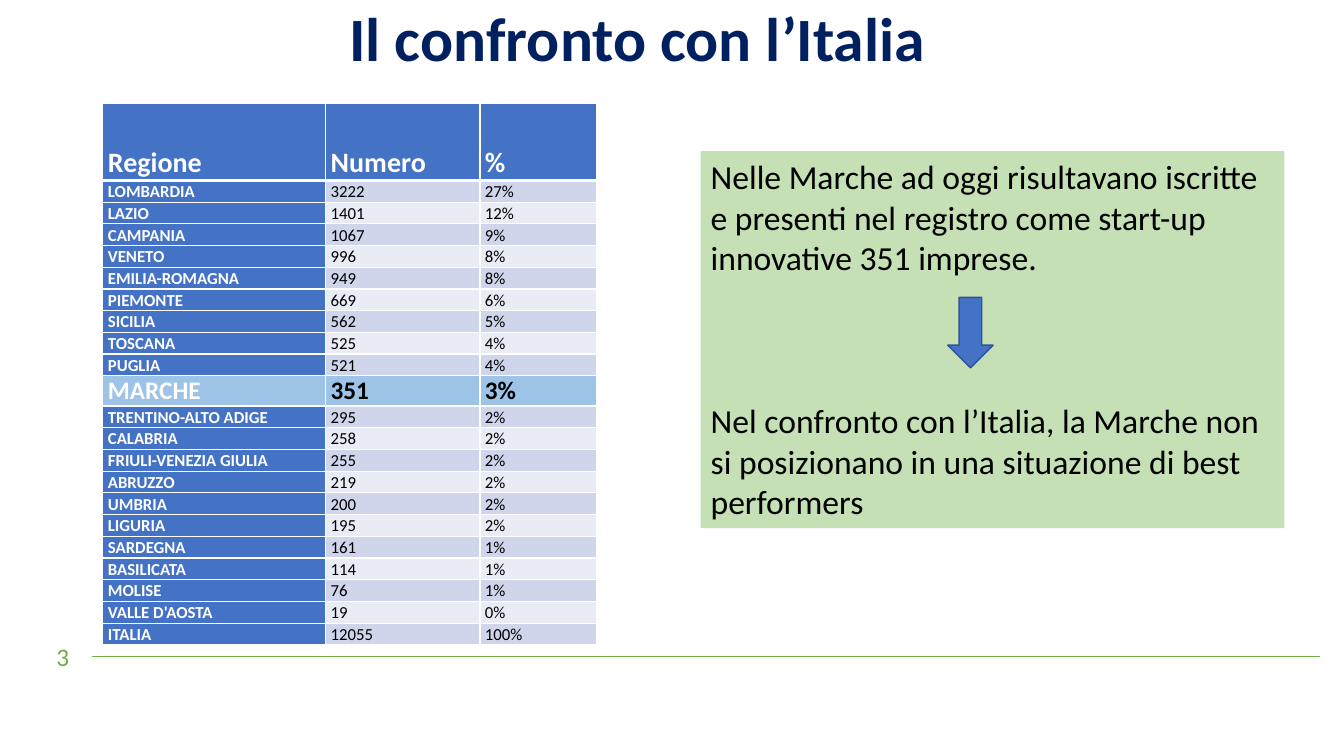
import pptx
import pptx.util
import pptx.dml.color
import pptx.enum.shapes
import pptx.enum.text
import pptx.oxml
import pptx.oxml.ns
from pptx.util import Inches

ALIGN = pptx.enum.text.PP_ALIGN
ANCHOR = pptx.enum.text.MSO_ANCHOR
SHAPE = pptx.enum.shapes.MSO_SHAPE
WHITE, BLACK, BLUE, GREEN = "FFFFFF", "000000", "4472C4", "70AD47"


def rgb(color):
    return pptx.dml.color.RGBColor.from_string(color)


def style_text(paragraph, size, color, bold=False, align=ALIGN.LEFT):
    paragraph.alignment = align
    for run in paragraph.runs:
        run.font.name = "Calibri"
        run.font.size = pptx.util.Pt(size)
        run.font.bold = bold
        run.font.color.rgb = rgb(color)


deck = pptx.Presentation()
deck.slide_width, deck.slide_height = Inches(13.33), Inches(7.5)
slide = deck.slides.add_slide(deck.slide_layouts.get_by_name("Title Only"))
shapes = slide.shapes

# Title
title = shapes.title
title.left, title.top = Inches(-0.44), Inches(-0.3)
title.width, title.height = Inches(13.53), Inches(1.8)
title.text_frame.text = "Il confronto con l’Italia"
title.text_frame.auto_size = pptx.enum.text.MSO_AUTO_SIZE.NONE
title.text_frame.vertical_anchor = ANCHOR.BOTTOM
title.text_frame.margin_bottom = Inches(0.76)
title.text_frame.paragraphs[0].line_spacing = 0.9
style_text(title.text_frame.paragraphs[0], 44, "002060", True, ALIGN.CENTER)

# Footer rule and page number
footer_rule = shapes.add_connector(
    pptx.enum.shapes.MSO_CONNECTOR.STRAIGHT,
    Inches(0.91), Inches(6.51), Inches(13.09), Inches(6.51))
footer_rule.line.color.rgb = rgb(GREEN)
footer_rule.line.width = pptx.util.Pt(0.5)
footer_rule._element.spPr.append(pptx.oxml.parse_xml(
    f"<a:effectLst {pptx.oxml.ns.nsdecls('a')}/>"))

page_number = shapes.add_textbox(Inches(0.46), Inches(6.31), Inches(0.31), Inches(0.4))
page_number.text_frame.word_wrap = True
page_number.text_frame.text = "3"
style_text(page_number.text_frame.paragraphs[0], 18, GREEN)

# Commentary panel
commentary = shapes.add_shape(
    SHAPE.RECTANGLE, Inches(6.95), Inches(1.5), Inches(5.79), Inches(3.74))
commentary.shadow.inherit = False
commentary.fill.solid()
commentary.fill.fore_color.rgb = rgb("C5E0B4")
commentary.line.fill.background()
commentary.text_frame.word_wrap = True
commentary.text_frame.vertical_anchor = ANCHOR.TOP
commentary.text_frame.text = (
    "Nelle Marche ad oggi risultavano iscritte e presenti nel registro "
    "come start-up innovative 351 imprese.\n"
    "Nel confronto con l’Italia, la Marche non si posizionano in una "
    "situazione di best performers")
for paragraph in commentary.text_frame.paragraphs:
    style_text(paragraph, 24, BLACK)
commentary.text_frame.paragraphs[1].space_before = pptx.util.Pt(88)

# Table of regions
HEADINGS = ("Regione", "Numero", "%")
REGIONS = [
    ("LOMBARDIA", "3222", "27%"),
    ("LAZIO", "1401", "12%"),
    ("CAMPANIA", "1067", "9%"),
    ("VENETO", "996", "8%"),
    ("EMILIA-ROMAGNA", "949", "8%"),
    ("PIEMONTE", "669", "6%"),
    ("SICILIA", "562", "5%"),
    ("TOSCANA", "525", "4%"),
    ("PUGLIA", "521", "4%"),
    ("MARCHE", "351", "3%"),
    ("TRENTINO-ALTO ADIGE", "295", "2%"),
    ("CALABRIA", "258", "2%"),
    ("FRIULI-VENEZIA GIULIA", "255", "2%"),
    ("ABRUZZO", "219", "2%"),
    ("UMBRIA", "200", "2%"),
    ("LIGURIA", "195", "2%"),
    ("SARDEGNA", "161", "1%"),
    ("BASILICATA", "114", "1%"),
    ("MOLISE", "76", "1%"),
    ("VALLE D'AOSTA", "19", "0%"),
    ("ITALIA", "12055", "100%"),
]
rows = [HEADINGS] + REGIONS
regions = shapes.add_table(
    len(rows), len(HEADINGS), Inches(1.02), Inches(1.03), Inches(4.9), Inches(5.37)).table
for column, width in zip(regions.columns, (2.21, 1.53, 1.16)):
    column.width = Inches(width)

for r, values in enumerate(rows):
    is_header, is_marche = r == 0, values[0] == "MARCHE"
    if is_header:
        regions.rows[r].height, size = Inches(0.76), 20
    elif is_marche:
        regions.rows[r].height, size = Inches(0.3), 18
    else:
        regions.rows[r].height, size = Inches(4.31 / 20), 12
    for c, value in enumerate(values):
        cell = regions.cell(r, c)
        cell.text_frame.text = value
        cell.vertical_anchor = ANCHOR.BOTTOM
        cell.margin_left = cell.margin_right = Inches(0.05)
        cell.margin_top = cell.margin_bottom = 0
        is_label = is_header or c == 0
        style_text(cell.text_frame.paragraphs[0], size, WHITE if is_label else BLACK,
                   is_label or is_marche, ALIGN.JUSTIFY)

        # White borders, heavier under the header
        for side in "LRTB":
            heavy = (r, side) in ((0, "B"), (1, "T"))
            cell._tc.get_or_add_tcPr().append(pptx.oxml.parse_xml(
                f'<a:ln{side} {pptx.oxml.ns.nsdecls("a")} w="{38100 if heavy else 12700}">'
                f'<a:solidFill><a:srgbClr val="{WHITE}"/></a:solidFill></a:ln{side}>'))

        if is_marche:
            fill = "9DC3E6"
        elif is_label:
            fill = BLUE
        else:
            fill = "CFD5EA" if r % 2 else "E9EBF5"
        cell.fill.solid()
        cell.fill.fore_color.rgb = rgb(fill)

# Arrow between the two statements
down_arrow = shapes.add_shape(
    SHAPE.DOWN_ARROW, Inches(9.4), Inches(2.95), Inches(0.45), Inches(0.7))
down_arrow.shadow.inherit = False
down_arrow.fill.solid()
down_arrow.fill.fore_color.rgb = rgb(BLUE)
down_arrow.line.color.rgb = rgb("325491")
down_arrow.line.width = pptx.util.Pt(1)

deck.save("out.pptx")
